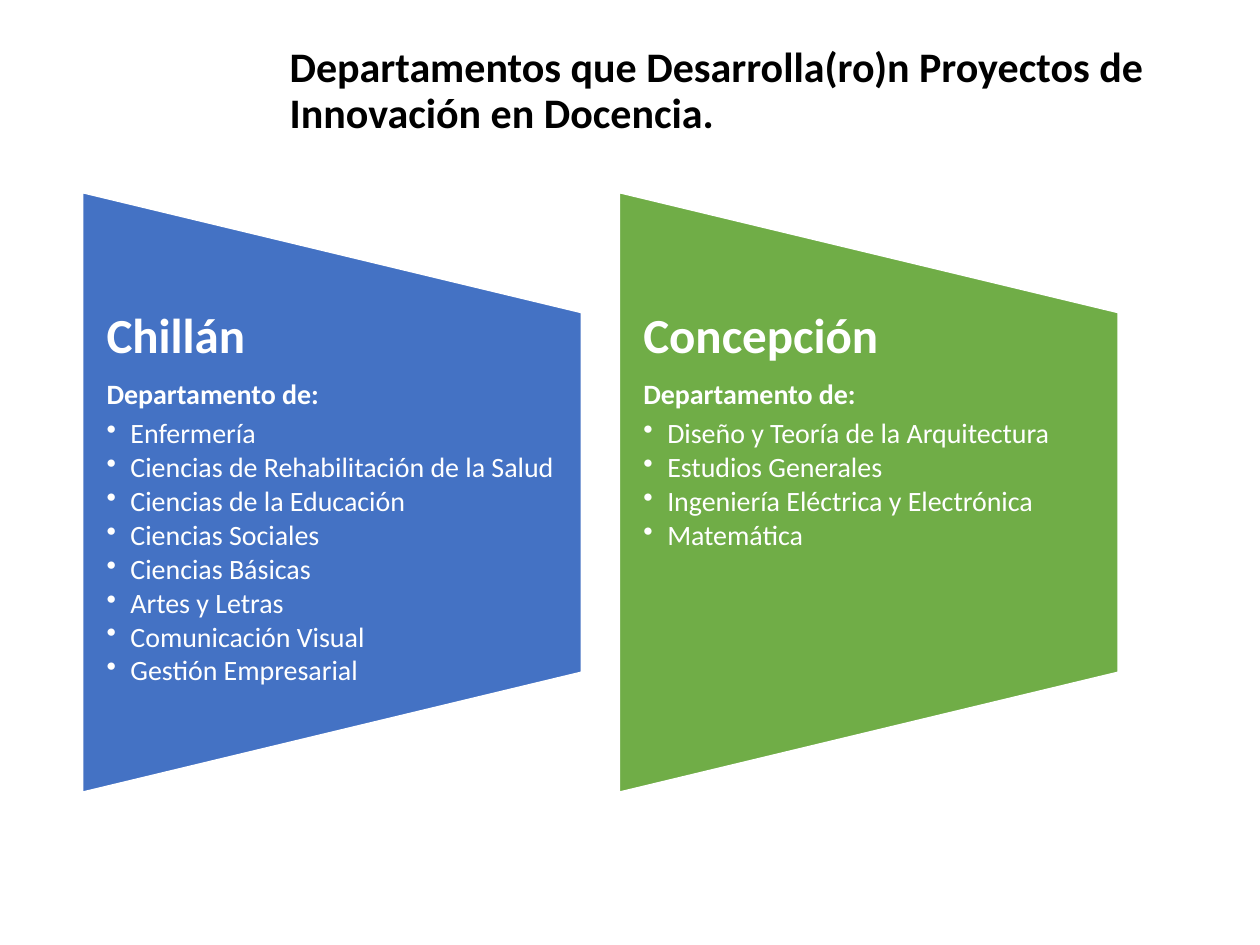
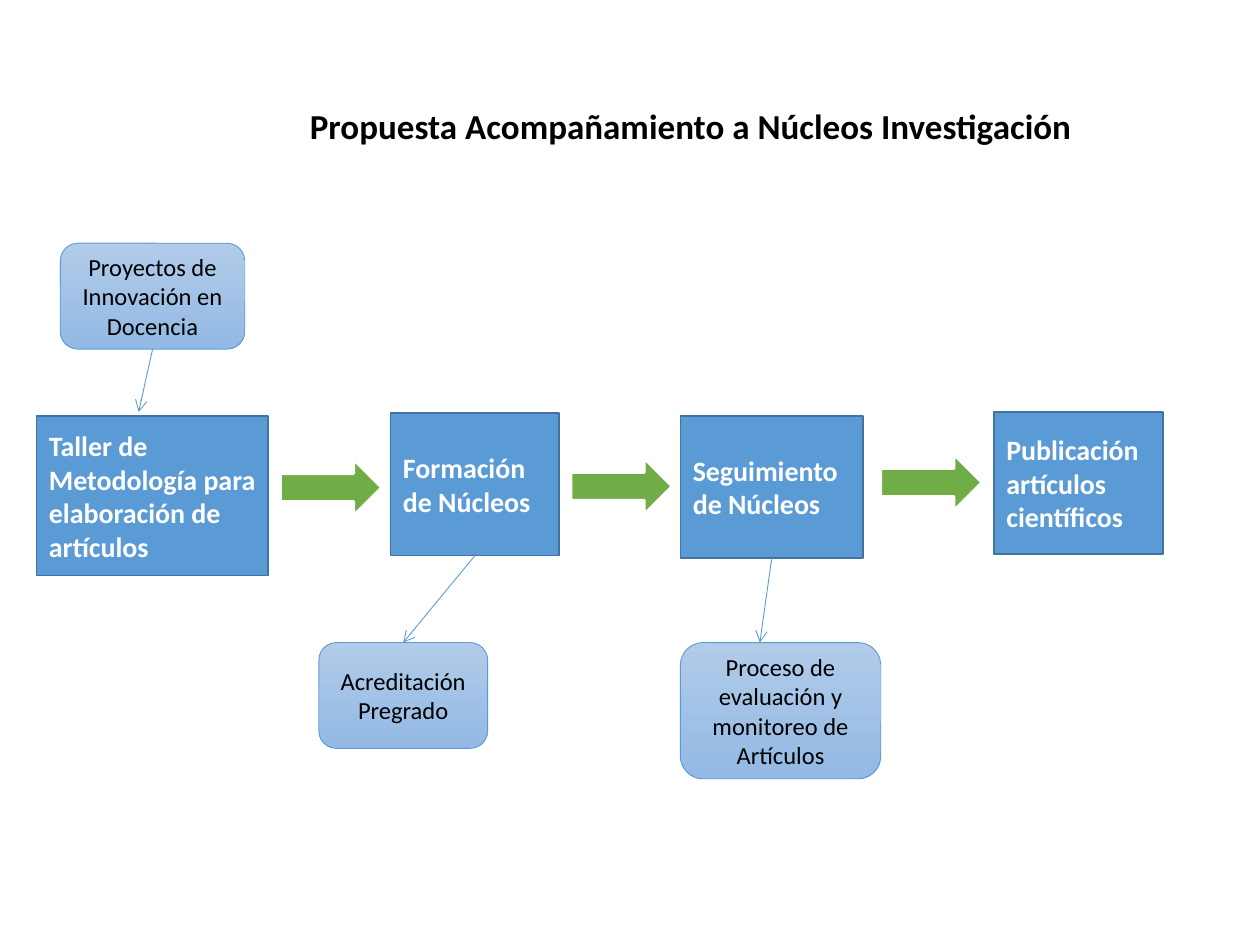
from dataclasses import dataclass

from lxml import etree
from pptx import Presentation
from pptx.dml.color import RGBColor
from pptx.enum.shapes import MSO_CONNECTOR, MSO_SHAPE
from pptx.enum.text import MSO_ANCHOR, PP_ALIGN
from pptx.oxml.ns import qn
from pptx.shapes.autoshape import Shape
from pptx.shapes.connector import Connector
from pptx.slide import Slide
from pptx.text.text import TextFrame, _Paragraph
from pptx.util import Pt

RECT, ROUND_RECT = MSO_SHAPE.RECTANGLE, MSO_SHAPE.ROUNDED_RECTANGLE
RIGHT_ARROW = MSO_SHAPE.RIGHT_ARROW
TRAPEZOID = MSO_SHAPE.FLOWCHART_MANUAL_OPERATION
STRAIGHT = MSO_CONNECTOR.STRAIGHT
TOP, MIDDLE = MSO_ANCHOR.TOP, MSO_ANCHOR.MIDDLE
LEFT, CENTER = PP_ALIGN.LEFT, PP_ALIGN.CENTER
SIDE_TOP, SIDE_BOTTOM = 0, 2

FONT = "Calibri"
BLACK = RGBColor(0x00, 0x00, 0x00)
WHITE = RGBColor(0xFF, 0xFF, 0xFF)
ROYAL = RGBColor(0x44, 0x72, 0xC4)
GREEN = RGBColor(0x70, 0xAD, 0x47)
BLUE = RGBColor(0x5B, 0x9B, 0xD5)
BLUE_EDGE = RGBColor(0x43, 0x73, 0x9E)
NOTE_TOP = RGBColor(0xB1, 0xCB, 0xE9)
NOTE_BOTTOM = RGBColor(0x93, 0xB9, 0xE4)

PANEL_W, PANEL_H = 285.12, 342.72
PANEL_LEFT, PANEL_TOP, PANEL_PITCH = 47.2, 110, 306.72
PANEL_TEXT_TOP, PANEL_TEXT_H = 177.84, 205.92
PANEL_INSET = 13.68
ARROW_W, ARROW_H = 57.6, 31.68


@dataclass(frozen=True)
class Box:
    x: float
    y: float
    w: float
    h: float


@dataclass(frozen=True)
class Campus:
    name: str
    color: RGBColor
    departments: tuple[str, ...]


@dataclass(frozen=True)
class Node:
    text: str
    box: Box


CAMPUSES = (
    Campus("Chillán", ROYAL, (
        "Enfermería",
        "Ciencias de Rehabilitación de la Salud",
        "Ciencias de la Educación",
        "Ciencias Sociales",
        "Ciencias Básicas",
        "Artes y Letras",
        "Comunicación Visual",
        "Gestión Empresarial",
    )),
    Campus("Concepción", GREEN, (
        "Diseño y Teoría de la Arquitectura",
        "Estudios Generales",
        "Ingeniería Eléctrica y Electrónica",
        "Matemática",
    )),
)

WORKSHOP = Node("Taller de Metodología para elaboración de artículos",
                Box(20.9, 237.6, 132.5, 91.4))
TRAINING = Node("Formación de Núcleos", Box(223.2, 236, 96.5, 81.4))
FOLLOW_UP = Node("Seguimiento de Núcleos", Box(388.8, 237.6, 104.4, 81.4))
PUBLICATION = Node("Publicación artículos científicos", Box(568, 235.4, 96.5, 81.4))
STAGES = (WORKSHOP, TRAINING, FOLLOW_UP, PUBLICATION)

PROJECTS = Node("Proyectos de Innovación en Docencia", Box(34.5, 139, 105.4, 60.5))
ACCREDITATION = Node("Acreditación Pregrado", Box(182.2, 367.2, 96.5, 60.5))
REVIEW = Node("Proceso de evaluación y monitoreo de Artículos",
              Box(388.8, 367.2, 114.5, 77.8))
NOTES = (PROJECTS, ACCREDITATION, REVIEW)

ARROWS = ((160.4, 262.8), (326.4, 262.1), (503.4, 259.9))


def add_run(p: _Paragraph, text: str, size: float, color: RGBColor, bold: bool) -> None:
    r = p.add_run()
    r.text = text
    r.font.name = FONT
    r.font.size = Pt(size)
    r.font.bold = bold
    r.font.color.rgb = color


def add_preset(slide: Slide, preset: MSO_SHAPE, box: Box, line: RGBColor,
               weight: float, fill: RGBColor | None = None) -> Shape:
    sp = slide.shapes.add_shape(preset, Pt(box.x), Pt(box.y), Pt(box.w), Pt(box.h))
    sp.shadow.inherit = False
    sp.line.color.rgb = line
    sp.line.width = Pt(weight)
    if fill is not None:
        sp.fill.solid()
        sp.fill.fore_color.rgb = fill
    return sp


def add_text_frame(slide: Slide, box: Box, anchor: MSO_ANCHOR) -> TextFrame:
    tb = slide.shapes.add_textbox(Pt(box.x), Pt(box.y), Pt(box.w), Pt(box.h))
    tf = tb.text_frame
    tf.word_wrap = True
    tf.vertical_anchor = anchor
    return tf


def add_title(slide: Slide, text: str, box: Box, size: float) -> None:
    p = add_text_frame(slide, box, MIDDLE).paragraphs[0]
    p.line_spacing = 0.9
    add_run(p, text, size, BLACK, True)


def add_bullet(p: _Paragraph) -> None:
    pPr = p._p.get_or_add_pPr()
    pPr.set("marL", str(Pt(PANEL_INSET)))
    pPr.set("indent", str(-Pt(PANEL_INSET)))
    etree.SubElement(pPr, qn("a:buChar")).set("char", "•")


def add_campus(slide: Slide, campus: Campus, left: float) -> None:
    shift = (PANEL_H - PANEL_W) / 2
    sp = add_preset(slide, TRAPEZOID,
                    Box(left - shift, PANEL_TOP + shift, PANEL_H, PANEL_W),
                    WHITE, 1, campus.color)
    sp.rotation = 270
    tf = add_text_frame(slide, Box(left, PANEL_TEXT_TOP, PANEL_W, PANEL_TEXT_H), TOP)
    tf.margin_left = tf.margin_right = Pt(PANEL_INSET)
    tf.margin_top = tf.margin_bottom = Pt(0)
    headings = [(campus.name, 28, 9.2, True), ("Departamento de:", 16, 5.3, True)]
    items = [(name, 16, 2.1, False) for name in campus.departments]
    for i, (text, size, after, heading) in enumerate(headings + items):
        p = tf.add_paragraph() if i else tf.paragraphs[0]
        if not heading:
            add_bullet(p)
        p.line_spacing = 0.9
        p.space_after = Pt(after)
        add_run(p, text, size, WHITE, heading)


def write_label(sp: Shape, text: str, size: float, color: RGBColor,
                bold: bool, align: PP_ALIGN) -> None:
    tf = sp.text_frame
    tf.word_wrap = True
    tf.vertical_anchor = MIDDLE
    p = tf.paragraphs[0]
    p.alignment = align
    add_run(p, text, size, color, bold)


def add_stage(slide: Slide, node: Node) -> Shape:
    sp = add_preset(slide, RECT, node.box, BLUE_EDGE, 1, BLUE)
    write_label(sp, node.text, 16, WHITE, True, LEFT)
    return sp


def add_note(slide: Slide, node: Node) -> Shape:
    sp = add_preset(slide, ROUND_RECT, node.box, BLUE, 0.5)
    sp.fill.gradient()
    sp.fill.gradient_angle = 270
    for stop, color in zip(sp.fill.gradient_stops, (NOTE_TOP, NOTE_BOTTOM)):
        stop.color.rgb = color
    write_label(sp, node.text, 14, BLACK, False, CENTER)
    return sp


def add_link(slide: Slide, start: Shape, x: float, y: float) -> Connector:
    cx = slide.shapes.add_connector(STRAIGHT, start.left, start.top, Pt(x), Pt(y))
    cx.begin_connect(start, SIDE_BOTTOM)
    cx.line.color.rgb = BLUE
    cx.line.width = Pt(0.5)
    etree.SubElement(cx.line._get_or_add_ln(), qn("a:tailEnd")).set("type", "arrow")
    etree.SubElement(cx._element.spPr, qn("a:effectLst"))
    return cx


def build_departments(slide: Slide) -> None:
    add_title(slide, "Departamentos que Desarrolla(ro)n Proyectos de Innovación en Docencia.",
              Box(158.4, 19.4, 577.4, 66.2), 24)
    for i, campus in enumerate(CAMPUSES):
        add_campus(slide, campus, PANEL_LEFT + i * PANEL_PITCH)


def build_proposal(slide: Slide) -> None:
    add_title(slide, "Propuesta Acompañamiento a Núcleos Investigación",
              Box(170, 20.9, 494.6, 104.4), 20)
    stages = {node: add_stage(slide, node) for node in STAGES}
    notes = {node: add_note(slide, node) for node in NOTES}
    for x, y in ARROWS:
        add_preset(slide, RIGHT_ARROW, Box(x, y, ARROW_W, ARROW_H), WHITE, 1.5, GREEN)
    add_link(slide, notes[PROJECTS], 79.2, 235.4)
    add_link(slide, stages[FOLLOW_UP], 434.2, 367.2)
    link = add_link(slide, stages[TRAINING], 230.4, 367.2)
    link.end_connect(notes[ACCREDITATION], SIDE_TOP)


def main() -> None:
    prs = Presentation()
    prs.slide_width, prs.slide_height = Pt(720), Pt(540)
    blank = prs.slide_layouts[6]
    for build in (build_departments, build_proposal):
        build(prs.slides.add_slide(blank))
    prs.save("out.pptx")


if __name__ == "__main__":
    main()
